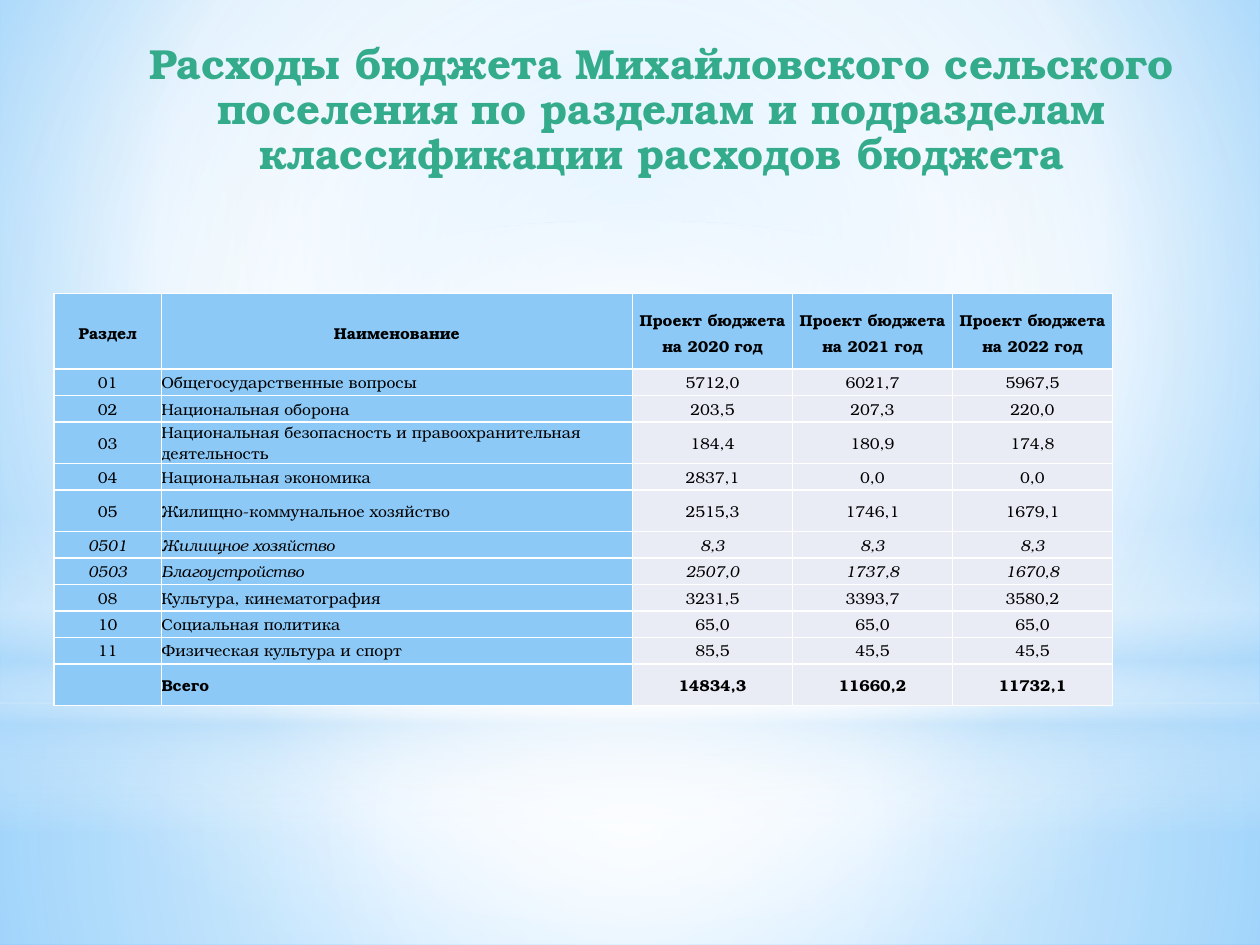
from lxml import etree
from pptx import Presentation
from pptx.dml.color import RGBColor
from pptx.enum.shapes import MSO_SHAPE
from pptx.enum.text import MSO_ANCHOR, PP_ALIGN
from pptx.oxml import parse_xml
from pptx.oxml.ns import qn
from pptx.util import Inches, Pt

RECT, OVAL = MSO_SHAPE.RECTANGLE, MSO_SHAPE.OVAL
LEFT, MID = PP_ALIGN.LEFT, PP_ALIGN.CENTER
TOP, CENTER = MSO_ANCHOR.TOP, MSO_ANCHOR.MIDDLE
NS = "http://schemas.openxmlformats.org/drawingml/2006/main"
FONT = "TeX Gyre Bonum"
HEX = {
    "white": "FFFFFF", "pale": "B4DCFA", "sky": "9ED5FF", "deep": "5BB9FF",
    "title": "34AC8B", "text": "000000", "head": "8CC9F7", "body": "E9EBF5",
}
MIDDLE = (50, 50, 50, 50)


class Deck:
    """Holds the style and the current slide."""

    def __init__(self, wide, high):
        self.prs = Presentation()
        self.prs.slide_width, self.prs.slide_height = Inches(wide), Inches(high)
        self.slide = self.prs.slides.add_slide(self.prs.slide_layouts[6])

    def blend(self, fill, root, stops, focus=None):
        """Swap a solid fill for a gradient: round about focus, or downward."""
        fill.solid()
        solid = root.xpath(".//p:bgPr/a:solidFill | ./p:spPr/a:solidFill")[0]
        marks = "".join(
            f'<a:gs pos="{pos * 1000}"><a:srgbClr val="{HEX[name]}">'
            f'<a:alpha val="{alpha * 1000}"/></a:srgbClr></a:gs>'
            for pos, name, alpha in stops)
        if focus:
            sides = " ".join(f'{s}="{v * 1000}"' for s, v in zip("ltrb", focus))
            kind = f'<a:path path="circle"><a:fillToRect {sides}/></a:path>'
        else:
            kind = '<a:lin ang="5400000" scaled="0"/>'
        grad = parse_xml(f'<a:gradFill xmlns:a="{NS}" rotWithShape="1">'
                         f'<a:gsLst>{marks}</a:gsLst>{kind}</a:gradFill>')
        solid.getparent().replace(solid, grad)

    def backdrop(self, stops, focus):
        self.blend(self.slide.background.fill, self.slide.element, stops, focus)

    def glow(self, kind, top, high, stops, focus=None):
        shape = self.slide.shapes.add_shape(
            kind, 0, Inches(top), self.prs.slide_width, Inches(high))
        shape.shadow.inherit = False
        shape.line.fill.background()
        self.blend(shape.fill, shape.element, stops, focus)

    def label(self, para, text, size, color, align, bold=False, italic=False):
        para.text, para.alignment = text, align
        font = para.font
        font.name, font.size, font.bold, font.italic = FONT, Pt(size), bold, italic
        font.color.rgb = RGBColor.from_string(HEX[color])

    def title(self, text, left, top, wide, high):
        box = self.slide.shapes.add_textbox(*map(Inches, (left, top, wide, high)))
        frame = box.text_frame
        frame.word_wrap, frame.vertical_anchor = True, TOP
        para = frame.paragraphs[0]
        self.label(para, text, 24, "title", MID, bold=True)
        para.line_spacing = 0.9

    def edge(self, cell):
        """Draw a thin white line on all four sides."""
        props = cell._tc.get_or_add_tcPr()
        for spot, side in enumerate(("lnL", "lnR", "lnT", "lnB")):
            line = etree.Element(qn(f"a:{side}"), w=str(Pt(1)))
            solid = etree.SubElement(line, qn("a:solidFill"))
            etree.SubElement(solid, qn("a:srgbClr"), val=HEX["white"])
            props.insert(spot, line)

    def table(self, left, top, cols, rows, data):
        grid = self.slide.shapes.add_table(
            len(rows), len(cols), Inches(left), Inches(top),
            Inches(sum(cols)), Inches(sum(rows))).table
        for col, wide in zip(grid.columns, cols):
            col.width = Inches(wide)
        for row, high in zip(grid.rows, rows):
            row.height = Inches(high)
        last = len(data) - 1
        for r, line in enumerate(data):
            for c, text in enumerate(line):
                cell = grid.cell(r, c)
                cell.margin_left = cell.margin_right = 0
                cell.margin_top = cell.margin_bottom = 0
                cell.vertical_anchor = CENTER
                cell.fill.solid()
                tint = "head" if r == 0 or c < 2 else "body"
                cell.fill.fore_color.rgb = RGBColor.from_string(HEX[tint])
                self.edge(cell)
                para = cell.text_frame.paragraphs[0]
                # Subsections have four-digit codes and stand in italics
                self.label(para, text, 9, "text", LEFT if r and c == 1 else MID,
                           bold=r in (0, last), italic=len(line[0]) == 4)
                if r == 0:
                    para.line_spacing = 1.15


def main():
    deck = Deck(10, 7.5)

    # Background and soft light
    deck.backdrop([(0, "sky", 100), (60, "white", 100), (100, "deep", 100)],
                  (20, 10, 20, 60))
    deck.glow(RECT, 5.58, 1.92,
              [(0, "white", 91), (37, "white", 76), (100, "pale", 79)], MIDDLE)
    deck.glow(RECT, 0, 5.58,
              [(0, "white", 89), (48, "white", 62), (100, "pale", 79)], MIDDLE)
    deck.glow(RECT, 4.12, 2.5,
              [(0, "white", 0), (29, "white", 30), (45, "pale", 40),
               (55, "white", 26), (65, "pale", 60), (100, "white", 0)])
    deck.glow(OVAL, 1.75, 5.58, [(0, "white", 100), (56, "white", 0)], MIDDLE)

    # Title
    deck.title("Расходы бюджета Михайловского сельского поселения по разделам "
               "и подразделам классификации расходов бюджета",
               0.75, 0.29, 9, 1.18)

    # Budget table
    years = [f"Проект бюджета на {year} год" for year in (2020, 2021, 2022)]
    data = [
        ("Раздел", "Наименование", *years),
        ("01", "Общегосударственные вопросы", "5712,0", "6021,7", "5967,5"),
        ("02", "Национальная оборона", "203,5", "207,3", "220,0"),
        ("03", "Национальная безопасность и правоохранительная деятельность",
         "184,4", "180,9", "174,8"),
        ("04", "Национальная экономика", "2837,1", "0,0", "0,0"),
        ("05", "Жилищно-коммунальное хозяйство", "2515,3", "1746,1", "1679,1"),
        ("0501", "Жилищное хозяйство", "8,3", "8,3", "8,3"),
        ("0503", "Благоустройство", "2507,0", "1737,8", "1670,8"),
        ("08", "Культура, кинематография", "3231,5", "3393,7", "3580,2"),
        ("10", "Социальная политика", "65,0", "65,0", "65,0"),
        ("11", "Физическая культура и спорт", "85,5", "45,5", "45,5"),
        ("", "Всего", "14834,3", "11660,2", "11732,1"),
    ]
    tall = {0: 0.6, 3: 0.33, 5: 0.33, 11: 0.33}
    rows = [tall.get(r, 0.21) for r in range(len(data))]
    deck.table(0.43, 2.33, [0.85, 3.74] + [1.27] * 3, rows, data)

    deck.prs.save("out.pptx")


if __name__ == "__main__":
    main()
